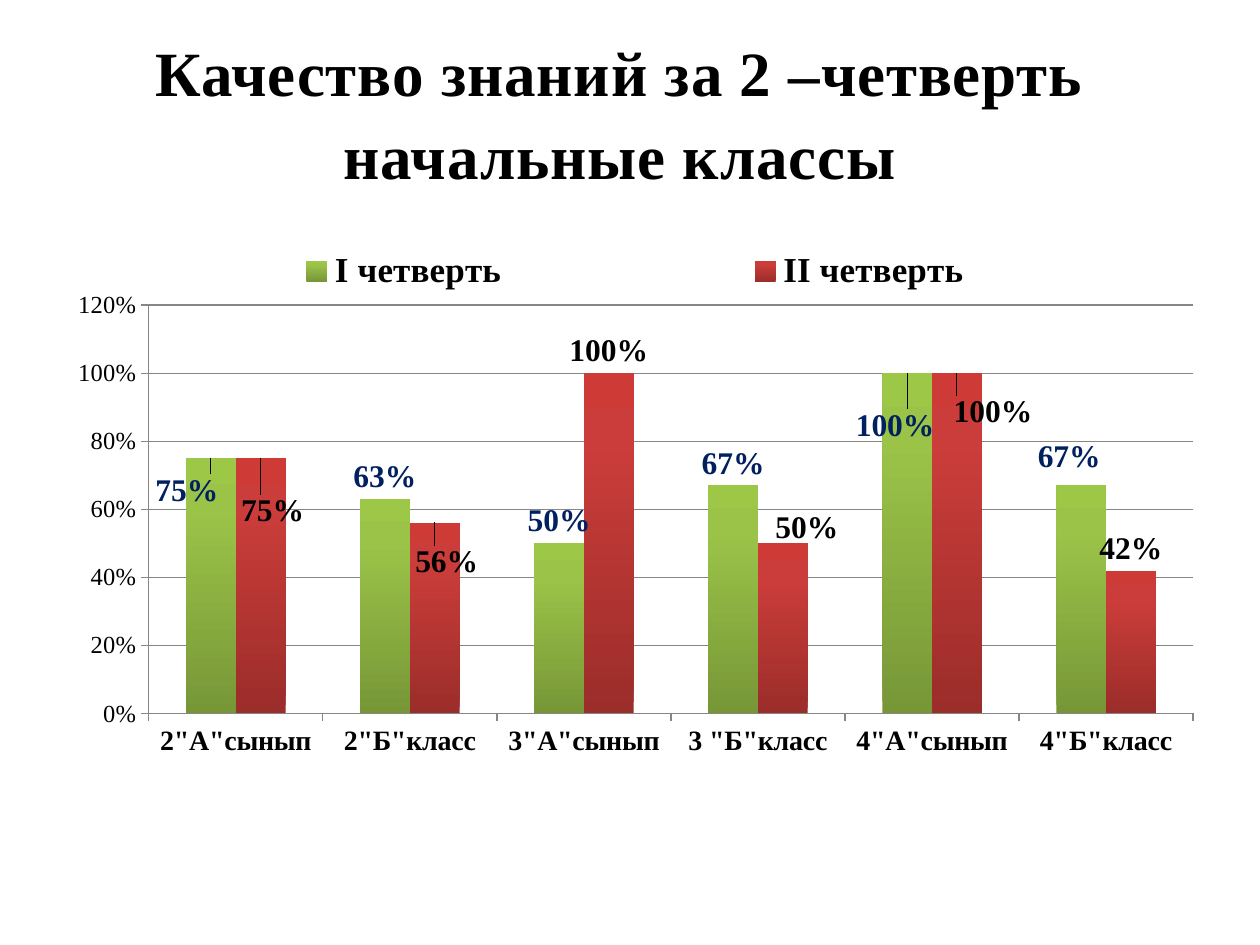
from dataclasses import dataclass, field

from lxml import etree
from pptx import Presentation
from pptx import util as u
from pptx.chart import data as chart_data
from pptx.dml.color import RGBColor
from pptx.enum import chart as ch
from pptx.enum import text
from pptx.oxml import parse_xml
from pptx.oxml.ns import nsdecls, qn

FONT = "Times New Roman"
COLORS = {
    "text": "000000",
    "navy": "002060",
    "axis": "868686",
    "green_dark": "779737",
    "green": "9BC348",
    "green_light": "9DC746",
    "red_dark": "9B2D2A",
    "red": "CB3D3A",
    "red_light": "CE3B37",
}
CLASSES = ['2"А"сынып', '2"Б"класс', '3"А"сынып',
           '3 "Б"класс', '4"А"сынып', '4"Б"класс']


@dataclass
class Quarter:
    name: str
    values: list[float]
    hue: str
    label_color: str
    label_shifts: dict[int, tuple[float, float]] = field(default_factory=dict)


QUARTERS = [
    Quarter("I четверть", [0.75, 0.63, 0.5, 0.67, 1, 0.67], "green", "navy",
            {0: (-0.02, 0.08), 4: (-0.01, 0.11), 5: (-0.01, -0.01)}),
    Quarter("II четверть", [0.75, 0.56, 1, 0.5, 1, 0.42], "red", "text",
            {0: (0.01, 0.11), 1: (0.01, 0.09), 3: (0.02, 0.01), 4: (0.03, 0.09)}),
]


def style_font(font, size: float, bold: bool = False, color: str = "text") -> None:
    font.name = FONT
    font.size = u.Pt(size)
    font.bold = bold
    font.color.rgb = RGBColor.from_string(COLORS[color])


def manual_layout(**settings: object):
    """Build a c:layout element from its manual settings, in schema order."""
    layout = etree.Element(qn("c:layout"))
    manual = etree.SubElement(layout, qn("c:manualLayout"))
    for name, value in settings.items():
        etree.SubElement(manual, qn(f"c:{name}")).set("val", str(value))
    return layout


def frame_layout(x: float, y: float, w: float, h: float, **target: str):
    return manual_layout(**target, xMode="edge", yMode="edge", x=x, y=y, w=w, h=h)


def set_layout(parent, layout, after: str) -> None:
    for old in parent.findall(qn("c:layout")):
        parent.remove(old)
    previous = parent.find(qn(after)) if after else None
    if previous is None:
        parent.insert(0, layout)
    else:
        previous.addnext(layout)


def fill_gradient(series, hue: str) -> None:
    """Shade the bars from a dark foot to a light top."""
    stops = "".join(
        f'<a:gs pos="{position}"><a:srgbClr val="{COLORS[key]}"/></a:gs>'
        for position, key in ((0, f"{hue}_dark"), (80000, hue), (100000, f"{hue}_light")))
    properties = series.format.fill and series._element.get_or_add_spPr()
    properties.insert(0, parse_xml(
        f'<a:gradFill {nsdecls("a")} rotWithShape="1"><a:gsLst>{stops}</a:gsLst>'
        '<a:lin ang="16200000" scaled="0"/></a:gradFill>'))


def style_series(series, quarter: Quarter) -> None:
    fill_gradient(series, quarter.hue)
    series.invert_if_negative = False
    labels = series.data_labels
    labels.show_value = True
    labels.number_format = "0%"
    labels.number_format_is_linked = False
    labels.position = ch.XL_LABEL_POSITION.OUTSIDE_END
    style_font(labels.font, 18, True, quarter.label_color)
    for index, (x, y) in quarter.label_shifts.items():
        label = series.points[index].data_label
        style_font(label.font, 18, True, quarter.label_color)
        label.position = ch.XL_LABEL_POSITION.OUTSIDE_END
        element = labels._element.find(f"{qn('c:dLbl')}[{qn('c:idx')}='']")
        for element in labels._element.findall(qn("c:dLbl")):
            if element.find(qn("c:idx")).get("val") == str(index):
                set_layout(element, manual_layout(x=x, y=y), "c:idx")


def style_axis(axis, size: float, bold: bool) -> None:
    style_font(axis.tick_labels.font, size, bold)
    axis.major_tick_mark = ch.XL_TICK_MARK.OUTSIDE
    axis.minor_tick_mark = ch.XL_TICK_MARK.NONE
    lines = [axis.format.line]
    if axis.has_major_gridlines:
        lines.append(axis.major_gridlines.format.line)
    for line in lines:
        line.color.rgb = RGBColor.from_string(COLORS["axis"])
        line.width = u.Pt(0.75)


def add_title(page, lines: list[str]) -> None:
    box = page.shapes.add_textbox(u.Cm(1), u.Cm(0.4), u.Cm(23), u.Cm(3.33))
    box.text_frame.word_wrap = True
    para = box.text_frame.paragraphs[0]
    para.alignment = text.PP_ALIGN.CENTER
    para.line_spacing = 1.1
    for number, line in enumerate(lines):
        if number:
            para.add_line_break()
        span = para.add_run()
        span.text = line
        style_font(span.font, 36, True)
        span.font._element.set("spc", "50")


def add_quality_chart(page) -> None:
    data = chart_data.CategoryChartData(number_format="0%")
    data.categories = CLASSES
    for quarter in QUARTERS:
        data.add_series(quarter.name, quarter.values)
    chart = page.shapes.add_chart(
        ch.XL_CHART_TYPE.COLUMN_CLUSTERED,
        u.Cm(0.58), u.Cm(4.37), u.Cm(24.2), u.Cm(13.72), data).chart
    chart.has_title = False
    chart.font.name = "Calibri"
    chart.font.size = u.Pt(18)

    plot = chart.plots[0]
    plot.gap_width = 150
    plot.overlap = 0
    plot.vary_by_categories = False
    for series, quarter in zip(plot.series, QUARTERS):
        style_series(series, quarter)

    values = chart.value_axis
    values.minimum_scale, values.maximum_scale, values.major_unit = 0, 1.2, 0.2
    values.tick_labels.number_format = "0%"
    values.tick_labels.number_format_is_linked = False
    style_axis(values, 14, False)
    style_axis(chart.category_axis, 16, True)

    chart.has_legend = True
    legend = chart.legend
    legend.position = ch.XL_LEGEND_POSITION.RIGHT
    legend.include_in_layout = False
    style_font(legend.font, 20, True)
    set_layout(legend._element, frame_layout(0.03, 0.04, 0.95, 0.08), "c:legendPos")
    plot_area = chart._chartSpace.chart.plotArea
    set_layout(plot_area, frame_layout(0.1, 0.13, 0.87, 0.6, layoutTarget="inner"), "")


def main() -> None:
    deck = Presentation()
    deck.slide_width, deck.slide_height = u.Cm(25.4), u.Cm(19.05)
    page = deck.slides.add_slide(deck.slide_layouts[6])
    add_title(page, ["Качество знаний за 2 –четверть", "начальные классы"])
    add_quality_chart(page)
    deck.save("out.pptx")


if __name__ == "__main__":
    main()
